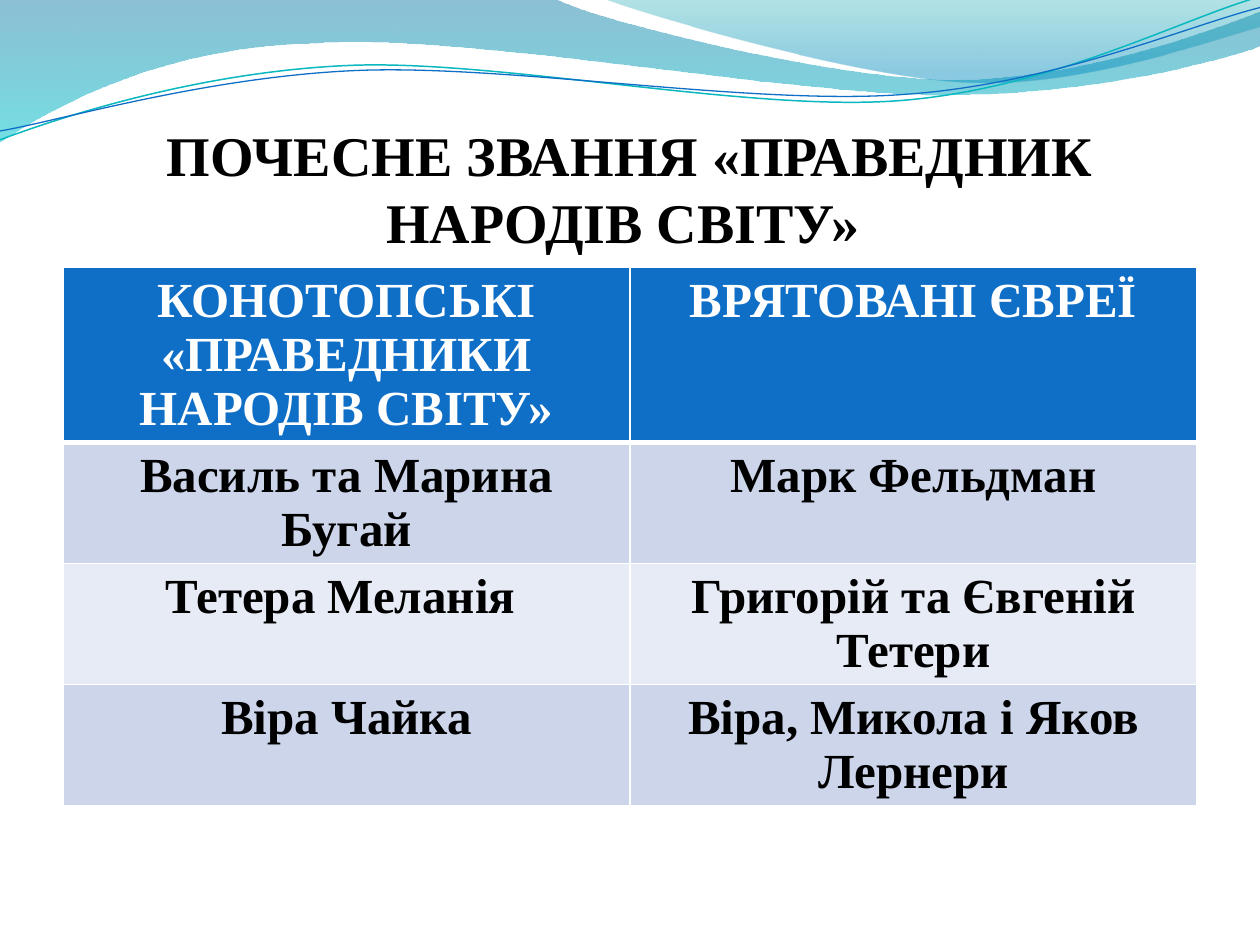
from lxml.etree import SubElement
from pptx import Presentation
from pptx.dml.color import RGBColor
from pptx.enum.text import MSO_ANCHOR as Anchor, MSO_AUTO_SIZE as AutoSize, PP_ALIGN as Align
from pptx.oxml.ns import qn
from pptx.util import Inches, Pt

FONT = "Times New Roman"
BLUE, WHITE, BLACK = "0F6FC6", "FFFFFF", "000000"
BANDS = ("CCD5EA", "E7EBF5")
WIDTH, HEIGHT = 10, 7.5
MARGIN = WIDTH / 20
HEADER_HEIGHT, ROW_HEIGHT = 1.38, 0.96

ROWS = [
    ("КОНОТОПСЬКІ «ПРАВЕДНИКИ НАРОДІВ СВІТУ»", "ВРЯТОВАНІ ЄВРЕЇ"),
    ("Василь та Марина Бугай", "Марк Фельдман"),
    ("Тетера Меланія ", "Григорій та Євгеній Тетери"),
    ("Віра Чайка", "Віра, Микола і Яков Лернери"),
]

# Each wave: a list of segments; 2 numbers are a line, 6 numbers a Bezier curve
BROAD_WAVE = [
    (0, 0), (4.4, -0.01),
    (4.76, 0.17, 6.64, 0.63, 7.58, 0.63), (8.53, 0.63, 9.58, 0.26, 10, 0.09),
    (10.01, 0.36),
    (9.83, 0.44, 8.7, 0.76, 7.46, 0.75), (6.22, 0.75, 3.82, 0.28, 2.57, 0.34),
    (1.29, 0.36, 0.46, 0.83, -0.01, 1.13),
]
RIGHT_WAVE = [
    (4.79, -0.01),
    (5.09, 0.11, 6.82, 0.62, 7.69, 0.65), (8.56, 0.69, 9.61, 0.32, 10, 0.21),
    (10, 0),
]
TEAL_LINE = [
    (0, 1.11), (0.48, 0.93, 1.58, 0.57, 2.77, 0.52),
    (3.95, 0.47, 5.93, 0.89, 7.13, 0.8), (8.33, 0.71, 9.38, 0.15, 9.98, -0.02),
]
BLUE_LINE = [
    (0, 1.04), (0.47, 0.96, 1.64, 0.61, 2.83, 0.56),
    (4.03, 0.51, 5.97, 0.84, 7.17, 0.75), (8.36, 0.67, 9.41, 0.21, 10, 0.06),
]


def color(hex_string):
    return RGBColor.from_string(hex_string)


def add_wave(slide, segments, close):
    """Freeform whose six-number segments become Bezier curves."""
    points = [
        (Inches(segment[i]), Inches(segment[i + 1]))
        for segment in segments for i in range(0, len(segment), 2)
    ]
    builder = slide.shapes.build_freeform(*points[0])
    builder.add_line_segments(points[1:], close=close)
    shape = builder.convert_to_shape()
    shape.shadow.inherit = False

    # Merge the three points of each curve into one cubic segment
    lines = iter(list(shape._element.spPr.iter(qn("a:lnTo"))))
    for segment in segments[1:]:
        line = next(lines)
        if len(segment) == 6:
            line.addprevious(curve := line.makeelement(qn("a:cubicBezTo")))
            for node in (line, next(lines), next(lines)):
                curve.append(node[0])
                node.getparent().remove(node)
    return shape


def add_filled_wave(slide, segments, stops):
    """Closed wave with a top-to-bottom gradient of (position, colour, opacity)."""
    shape = add_wave(slide, segments, close=True)
    shape.line.fill.background()
    shape.fill.gradient()
    shape.fill.gradient_angle = 270
    for stop, (position, hex_string, _) in zip(shape.fill.gradient_stops, stops):
        stop.position = position
        stop.color.rgb = color(hex_string)
    for node, (_, _, opacity) in zip(shape._element.spPr.iter(qn("a:srgbClr")), stops):
        SubElement(node, qn("a:alpha"), val=str(opacity * 1000))


def add_line_wave(slide, segments, hex_string, width):
    shape = add_wave(slide, segments, close=False)
    shape.fill.background()
    shape.line.color.rgb = color(hex_string)
    shape.line.width = Pt(width)


def write_text(text_frame, text, size, hex_string):
    paragraph = text_frame.paragraphs[0]
    paragraph.alignment = Align.CENTER
    run = paragraph.add_run()
    run.text = text
    for name, value in dict(name=FONT, size=Pt(size), bold=True).items():
        setattr(run.font, name, value)
    run.font.color.rgb = color(hex_string)


def add_title(slide, text):
    title = slide.shapes.title
    box = dict(left=MARGIN, top=0.77, width=WIDTH - 2 * MARGIN, height=1.25)
    for name, value in box.items():
        setattr(title, name, Inches(value))
    frame_format = dict(
        margin_left=0, margin_right=0, margin_top=Inches(0.05), margin_bottom=0,
        vertical_anchor=Anchor.BOTTOM, word_wrap=True, auto_size=AutoSize.NONE,
    )
    for name, value in frame_format.items():
        setattr(title.text_frame, name, value)
    write_text(title.text_frame, text, 32, BLACK)
    slide.shapes._spTree.append(title._element)  # in front of the waves


def add_borders(cell, widths):
    properties = cell._tc.get_or_add_tcPr()
    for side, width in widths.items():
        line = SubElement(properties, qn(f"a:ln{side}"), w=str(Pt(width)))
        fill = SubElement(line, qn("a:solidFill"))
        SubElement(fill, qn("a:srgbClr"), val=WHITE)


def add_rescuers_table(slide, rows):
    heights = [HEADER_HEIGHT] + [ROW_HEIGHT] * (len(rows) - 1)
    table = slide.shapes.add_table(
        len(rows), len(rows[0]), Inches(MARGIN), Inches(2.12),
        Inches(WIDTH - 2 * MARGIN), Inches(sum(heights)),
    ).table
    for row_index, texts in enumerate(rows):
        table.rows[row_index].height = Inches(heights[row_index])
        is_header = row_index == 0
        for column_index, text in enumerate(texts):
            cell = table.cell(row_index, column_index)
            if is_header:
                add_borders(cell, dict(L=1, R=1, T=1, B=3))
            cell.fill.solid()
            cell.fill.fore_color.rgb = color(BLUE if is_header else BANDS[(row_index - 1) % 2])
            write_text(cell.text_frame, text, 28, WHITE if is_header else BLACK)


def main():
    presentation = Presentation()
    presentation.slide_width, presentation.slide_height = Inches(WIDTH), Inches(HEIGHT)
    slide = presentation.slides.add_slide(presentation.slide_layouts[5])

    # Waves along the top
    add_filled_wave(slide, BROAD_WAVE, [(0, "0074A1", 45), (1, "00C6CF", 55)])
    add_filled_wave(slide, RIGHT_WAVE, [(0, "00A1A9", 30), (0.8, "008BBF", 45)])
    add_line_wave(slide, TEAL_LINE, "0AB8BF", 0.85)
    add_line_wave(slide, BLUE_LINE, BLUE, 0.75)

    # Title and table
    add_title(slide, "ПОЧЕСНЕ ЗВАННЯ «ПРАВЕДНИК НАРОДІВ СВІТУ» ")
    add_rescuers_table(slide, ROWS)

    presentation.save("out.pptx")


if __name__ == "__main__":
    main()
